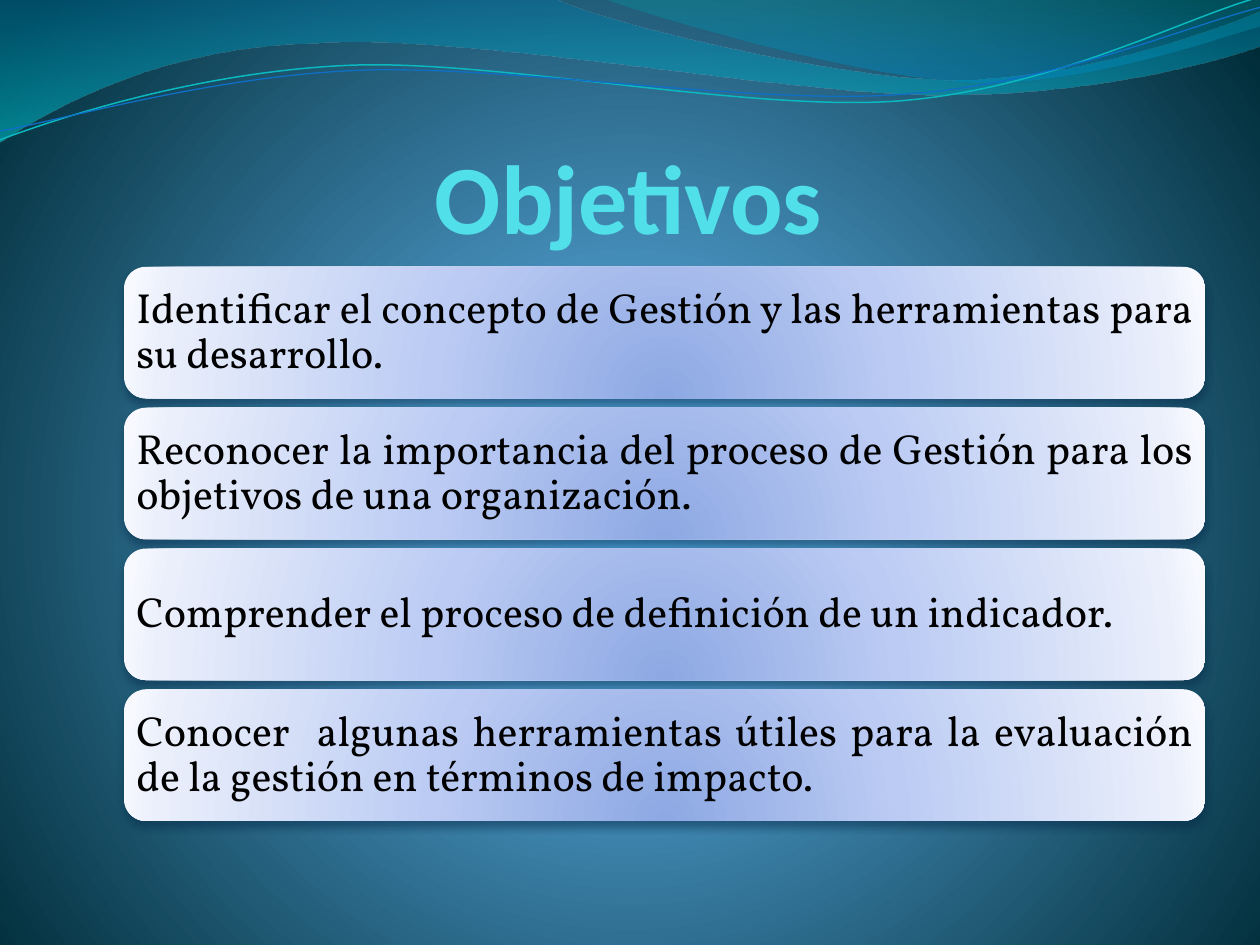
from dataclasses import dataclass

from lxml import etree
from pptx import Presentation
from pptx.dml.color import RGBColor
from pptx.enum.shapes import MSO_SHAPE
from pptx.enum.text import MSO_ANCHOR, MSO_AUTO_SIZE, PP_ALIGN
from pptx.oxml import parse_xml
from pptx.oxml.ns import nsdecls, qn
from pptx.util import Cm, Pt

ROUNDED = MSO_SHAPE.ROUNDED_RECTANGLE
MIDDLE, BOTTOM = MSO_ANCHOR.MIDDLE, MSO_ANCHOR.BOTTOM
CENTER, JUSTIFY = PP_ALIGN.CENTER, PP_ALIGN.JUSTIFY
NO_AUTOFIT = MSO_AUTO_SIZE.NONE

COLORS = {
    "title": "51E0EA", "text": "000000", "shadow": "042747",
    "teal_line": "0AB8BF", "blue_line": "0F6FC6",
}
LINE_TILT = 357.3
WAVE_UNIT = Cm(0.01)


@dataclass
class Gradient:
    stops: list[tuple]
    focus: tuple[int, ...] = ()


@dataclass
class Wave:
    start: tuple[int, int]
    segments: list[tuple[int, ...]]
    gradient: Gradient | None = None
    line: str = ""
    width: float = 0


BACKGROUND = Gradient([(0, "4AA0D6"), (25, "4C98C7"), (100, "002C38")],
                      (10, 110, 10, 100))
CARD = Gradient([(0, "8DA8E3"), (43, "BBCBF3"), (93, "EAEFFB"), (100, "F7F9FF")],
                (50, 130, 50, -30))

WAVES = [
    Wave((0, 0), [(1118, -3), (1209, 43, 1687, 160, 1925, 160),
                  (2167, 160, 2433, 66, 2540, 23), (2543, 91),
                  (2497, 112, 2210, 193, 1895, 191),
                  (1580, 191, 970, 71, 653, 86),
                  (328, 91, 117, 211, -3, 287)],
         Gradient([(0, "0074A1", 45), (100, "00C6CF", 55)])),
    Wave((1217, -3), [(1293, 28, 1732, 157, 1953, 165),
                      (2174, 175, 2441, 81, 2540, 53), (2540, 0)],
         Gradient([(0, "00A1A9", 30), (80, "008BBF", 45)])),
    Wave((-5, 222), [(119, 182, 402, 104, 705, 105),
                     (1005, 107, 1502, 237, 1808, 229),
                     (2113, 220, 2386, 91, 2541, 55)],
         line="teal_line", width=0.85),
    Wave((-4, 204), [(116, 190, 417, 115, 720, 116),
                     (1025, 118, 1513, 225, 1819, 216),
                     (2121, 210, 2393, 106, 2545, 75)],
         line="blue_line", width=0.75),
]

OBJECTIVES = [
    "Identificar el concepto de Gestión y las herramientas para su desarrollo.",
    "Reconocer la importancia del proceso de Gestión para los objetivos de una organización.",
    "Comprender el proceso de definición de un indicador.",
    "Conocer  algunas herramientas útiles para la evaluación de la gestión en términos de impacto.",
]


def rgb(name: str) -> RGBColor:
    return RGBColor.from_string(COLORS[name])


def set_gradient(fill, element, gradient: Gradient) -> None:
    fill.gradient()
    old = element.find(".//" + qn("a:gradFill"))
    new = parse_xml(f'<a:gradFill {nsdecls("a")} rotWithShape="1"><a:gsLst/></a:gradFill>')
    for pos, color, *alpha in gradient.stops:
        gs = etree.SubElement(new[0], qn("a:gs"), pos=str(pos * 1000))
        clr = etree.SubElement(gs, qn("a:srgbClr"), val=color)
        for value in alpha:
            etree.SubElement(clr, qn("a:alpha"), val=str(value * 1000))
    if gradient.focus:
        circle = etree.SubElement(new, qn("a:path"), path="circle")
        sides = {k: str(v * 1000) for k, v in zip("ltrb", gradient.focus)}
        etree.SubElement(circle, qn("a:fillToRect"), sides)
    else:
        etree.SubElement(new, qn("a:lin"), ang="5400000", scaled="1")
    old.getparent().replace(old, new)


def curve_segments(sp, segments: list[tuple[int, ...]]) -> None:
    lines = iter(sp._element.findall(".//" + qn("a:lnTo")))
    for seg in segments:
        first = next(lines)
        if len(seg) == 6:
            curve = etree.Element(qn("a:cubicBezTo"))
            first.addprevious(curve)
            for line in (first, next(lines), next(lines)):
                curve.append(line[0])
                line.getparent().remove(line)


def add_wave(s, wave: Wave) -> None:
    points = [pt for seg in wave.segments for pt in zip(seg[::2], seg[1::2])]
    builder = s.shapes.build_freeform(*wave.start, scale=WAVE_UNIT)
    builder.add_line_segments(points, close=wave.gradient is not None)
    sp = builder.convert_to_shape()
    curve_segments(sp, wave.segments)
    sp.shadow.inherit = False
    if wave.gradient:
        set_gradient(sp.fill, sp._element, wave.gradient)
        sp.line.fill.background()
    else:
        sp.rotation = LINE_TILT
        sp.fill.background()
        sp.line.color.rgb = rgb(wave.line)
        sp.line.width = Pt(wave.width)


def add_card(s, top: float, text: str) -> None:
    box = Cm(2.5), Cm(top), Cm(21.8), Cm(2.65)
    sp = s.shapes.add_shape(ROUNDED, *box)
    set_gradient(sp.fill, sp._element, CARD)
    sp.line.fill.background()
    sp.shadow.inherit = False
    effects = sp._element.spPr.find(qn("a:effectLst"))
    shadow = etree.SubElement(effects, qn("a:outerShdw"), blurRad=str(Pt(4.5)),
                              dist=str(Pt(3)), dir="5400000", rotWithShape="0")
    clr = etree.SubElement(shadow, qn("a:srgbClr"), val=COLORS["shadow"])
    etree.SubElement(clr, qn("a:alpha"), val="48000")

    tf = s.shapes.add_textbox(*box).text_frame
    tf.word_wrap = True
    tf.vertical_anchor = MIDDLE
    tf.margin_left = tf.margin_right = tf.margin_top = tf.margin_bottom = Cm(0.25)
    p = tf.paragraphs[0]
    p.text = text
    p.alignment = JUSTIFY
    p.line_spacing = 0.9
    p.font.size = Pt(24)
    p.font.name = "Vollkorn"
    p.font.color.rgb = rgb("text")


def set_title(s, text: str) -> None:
    sp = s.shapes.title
    sp.left, sp.top, sp.width, sp.height = Cm(1.27), Cm(1.95), Cm(22.86), Cm(3.17)
    tf = sp.text_frame
    tf.auto_size = NO_AUTOFIT
    tf.vertical_anchor = BOTTOM
    tf.margin_left = tf.margin_top = tf.margin_bottom = 0
    tf.margin_right = Cm(0.06)
    p = tf.paragraphs[0]
    p.text = text
    p.alignment = CENTER
    p.font.size = Pt(56)
    p.font.bold = True
    p.font.name = "Calibri"
    p.font.color.rgb = rgb("title")


def main() -> None:
    prs = Presentation()
    prs.slide_width, prs.slide_height = Cm(25.4), Cm(19.05)
    s = prs.slides.add_slide(prs.slide_layouts[5])
    set_gradient(s.background.fill, s._element, BACKGROUND)
    for wave in WAVES:
        add_wave(s, wave)
    set_title(s, "Objetivos")
    for i, text in enumerate(OBJECTIVES):
        add_card(s, 5.38 + i * 2.84, text)
    prs.save("out.pptx")


if __name__ == "__main__":
    main()
